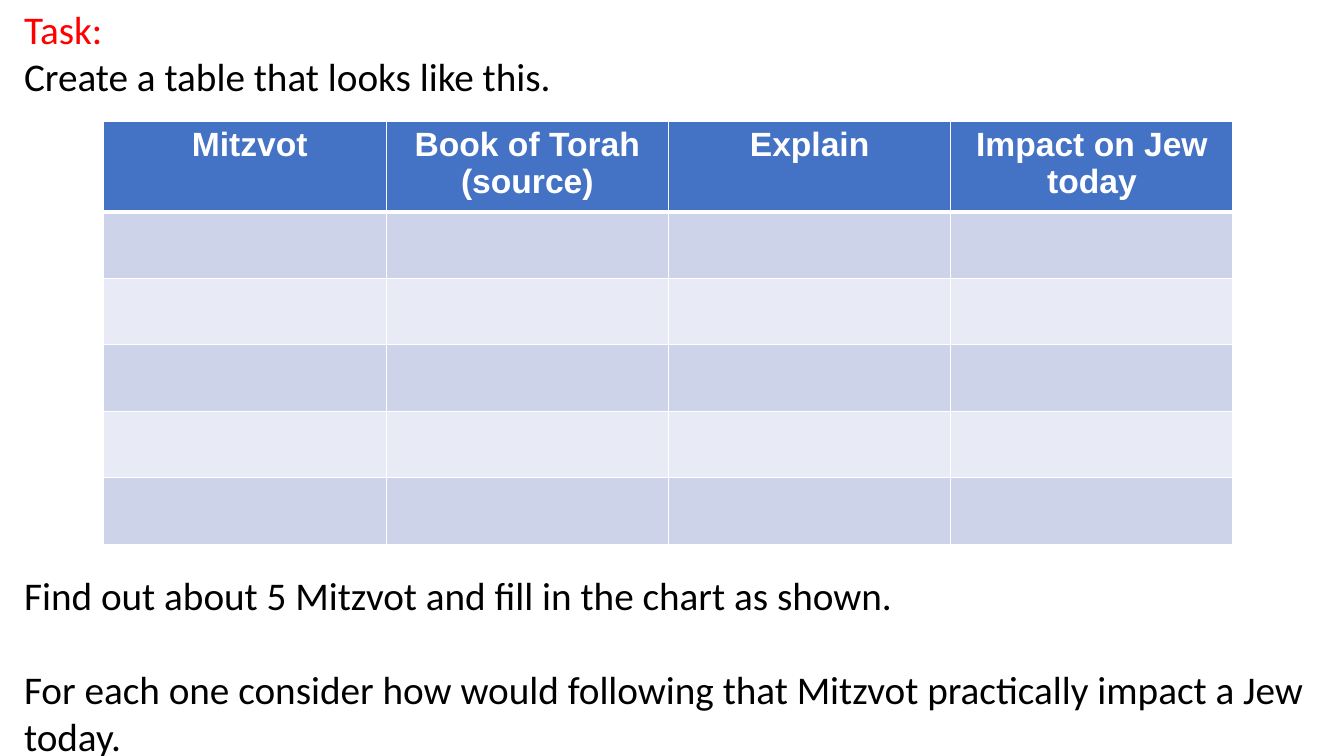
"""Build the Mitzvot task slide: instructions around an empty table to fill in."""
from lxml.etree import SubElement
from pptx import Presentation
from pptx.dml.color import RGBColor
from pptx.enum.text import PP_ALIGN
from pptx.oxml.ns import qn
from pptx.util import Inches, Pt

RED = RGBColor(0xFF, 0x00, 0x00)
BLACK = RGBColor(0x00, 0x00, 0x00)
WHITE = RGBColor(0xFF, 0xFF, 0xFF)
HEADER_BLUE = RGBColor(0x44, 0x72, 0xC4)
BANDS = (RGBColor(0xCD, 0xD4, 0xEA), RGBColor(0xE8, 0xEB, 0xF5))

INSTRUCTIONS = [
    ("Task:", RED, 0),
    ("Create a table that looks like this.", BLACK, 0),
    ("Find out about 5 Mitzvot and fill in the chart as shown.", BLACK, 337),
    ("For each one consider how would following that Mitzvot practically "
     "impact a Jew today.", BLACK, 34),
]
HEADINGS = [" Mitzvot", "Book of Torah (source)", "Explain", "Impact on Jew today"]
EMPTY_ROWS = 5
COLUMN_WIDTH, HEADER_HEIGHT, ROW_HEIGHT = 2.8, 0.88, 0.66


def format_paragraph(paragraph, font_name, size, color, bold=False):
    for run in paragraph.runs:
        run.font.name = font_name
        run.font.size = Pt(size)
        run.font.color.rgb = color
        run.font.bold = bold


def add_instructions(slide):
    box = slide.shapes.add_textbox(Inches(0.14), 0, Inches(12.98), Inches(7.64))
    text_frame = box.text_frame
    text_frame.word_wrap = True
    text_frame.text = "\n".join(text for text, _, _ in INSTRUCTIONS)
    for paragraph, (_, color, gap) in zip(text_frame.paragraphs, INSTRUCTIONS):
        paragraph.space_before = Pt(gap)
        format_paragraph(paragraph, "Calibri", 28, color)


def set_borders(cell, top, bottom):
    properties = cell._tc.get_or_add_tcPr()
    for side, width in (("L", 1), ("R", 1), ("T", top), ("B", bottom)):
        line = SubElement(properties, qn(f"a:ln{side}"), w=str(Pt(width)))
        fill = SubElement(line, qn("a:solidFill"))
        SubElement(fill, qn("a:srgbClr"), val=str(WHITE))


def add_mitzvot_table(slide):
    frame = slide.shapes.add_table(
        EMPTY_ROWS + 1, len(HEADINGS), Inches(1.03), Inches(1.2),
        Inches(COLUMN_WIDTH * len(HEADINGS)),
        Inches(HEADER_HEIGHT + ROW_HEIGHT * EMPTY_ROWS))
    table = frame.table
    table.horz_banding = False
    for column in table.columns:
        column.width = Inches(COLUMN_WIDTH)
    for index, row in enumerate(table.rows):
        row.height = Inches(ROW_HEIGHT if index else HEADER_HEIGHT)
        for cell in row.cells:
            set_borders(cell, top=3 if index == 1 else 1, bottom=1 if index else 3)
            cell.fill.solid()
            cell.fill.fore_color.rgb = BANDS[(index - 1) % 2] if index else HEADER_BLUE
    for cell, heading in zip(table.rows[0].cells, HEADINGS):
        cell.text_frame.text = heading
        paragraph = cell.text_frame.paragraphs[0]
        paragraph.alignment = PP_ALIGN.CENTER
        format_paragraph(paragraph, "Arial", 24, WHITE, bold=True)


def main():
    presentation = Presentation()
    presentation.slide_width = Inches(13.33)
    presentation.slide_height = Inches(7.5)
    slide = presentation.slides.add_slide(presentation.slide_layouts[6])
    add_instructions(slide)
    add_mitzvot_table(slide)
    presentation.save("out.pptx")


if __name__ == "__main__":
    main()
